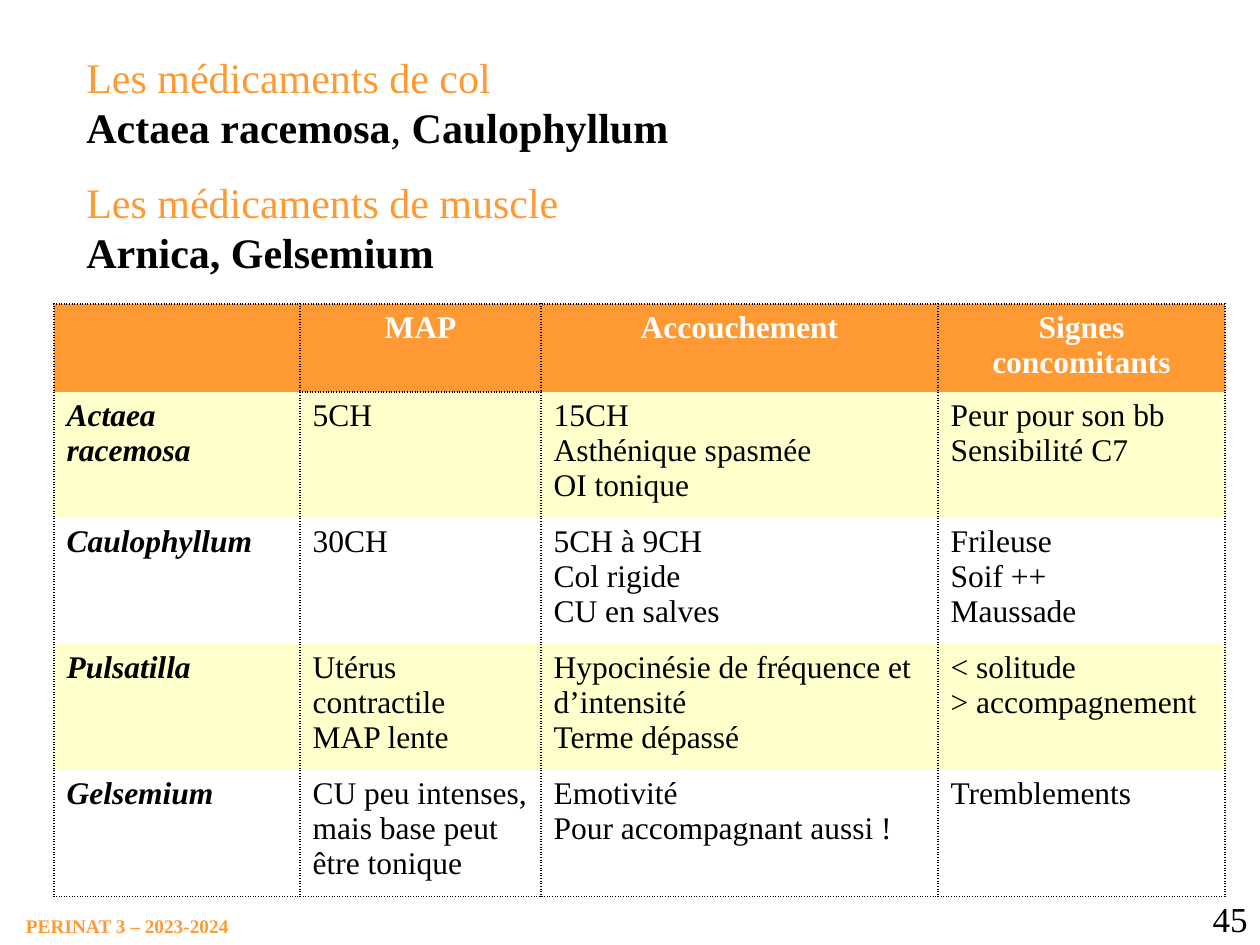
from lxml.etree import SubElement
from pptx import Presentation
from pptx.dml.color import RGBColor
from pptx.enum.text import MSO_AUTO_SIZE, PP_ALIGN
from pptx.oxml.ns import qn
from pptx.util import Emu, Pt

COLORS = {"orange": "FF9933", "cream": "FFFFCC", "white": "FFFFFF", "black": "000000"}
HEADERS = ["", "MAP", "Accouchement", "Signes concomitants"]
REMEDIES = [
    ["Actaea racemosa", "5CH", "15CH\nAsthénique spasmée\nOI tonique",
     "Peur pour son bb\nSensibilité C7"],
    ["Caulophyllum", "30CH", "5CH à 9CH\nCol rigide\nCU en salves",
     "Frileuse\nSoif ++\nMaussade"],
    ["Pulsatilla", "Utérus contractile\nMAP lente",
     "Hypocinésie de fréquence et d’intensité\nTerme dépassé",
     "< solitude\n> accompagnement"],
    ["Gelsemium", "CU peu intenses, mais base peut être tonique",
     "Emotivité\nPour accompagnant aussi !", "Tremblements"],
]
COLUMN_WIDTHS = [246, 241, 397, 287]
HEADER_HEIGHT = 88
ROW_HEIGHT = 126


def px(length):
    return Emu(round(length * 914400 / 126))


class SlideBuilder:
    font_name = "Times New Roman"

    def __init__(self, slide):
        self.slide = slide

    def format_span(self, span, size, color, bold=False, italic=False):
        font = span.font
        font.name = self.font_name
        font.size = Pt(size)
        font.bold = bold
        font.italic = italic
        font.color.rgb = RGBColor.from_string(COLORS[color])

    def text(self, left, top, width, height, paragraphs, size,
             align=PP_ALIGN.LEFT, wrap=True, inset=True):
        box = self.slide.shapes.add_textbox(px(left), px(top), px(width), px(height))
        frame = box.text_frame
        frame.word_wrap = wrap
        frame.auto_size = MSO_AUTO_SIZE.SHAPE_TO_FIT_TEXT
        if not inset:
            frame.margin_left = frame.margin_right = 0
            frame.margin_top = frame.margin_bottom = 0
        for index, (spans, space_before) in enumerate(paragraphs):
            para = frame.add_paragraph() if index else frame.paragraphs[0]
            para.alignment = align
            if space_before:
                para.space_before = Pt(space_before)
            for words, color, bold in spans:
                span = para.add_run()
                span.text = words
                self.format_span(span, size, color, bold)

    def borders(self, cell, dotted_sides):
        properties = cell._tc.get_or_add_tcPr()
        for index, side in enumerate("LRTB"):
            line = SubElement(properties, qn(f"a:ln{side}"), w=str(Pt(1)))
            if side in dotted_sides:
                fill = SubElement(line, qn("a:solidFill"))
                SubElement(fill, qn("a:srgbClr"), val=COLORS["black"])
                SubElement(line, qn("a:prstDash"), val="sysDot")
            else:
                SubElement(line, qn("a:noFill"))
            properties.insert(index, line)

    def cell(self, cell, words, fill, color, bold, italic, align):
        cell.fill.solid()
        cell.fill.fore_color.rgb = RGBColor.from_string(COLORS[fill])
        cell.text_frame.text = words
        for para in cell.text_frame.paragraphs:
            para.alignment = align
            for span in para.runs:
                self.format_span(span, 18, color, bold, italic)

    def table(self, left, top, rows, widths, heights):
        table = self.slide.shapes.add_table(
            len(rows), len(widths), px(left), px(top),
            px(sum(widths)), px(sum(heights))).table
        for column, width in zip(table.columns, widths):
            column.width = px(width)
        for row, height in zip(table.rows, heights):
            row.height = px(height)
        last = len(rows) - 1
        for row_index, row in enumerate(rows):
            header = row_index == 0
            fill = "orange" if header else ("white", "cream")[row_index % 2]
            for column_index, words in enumerate(row):
                name = not header and column_index == 0
                cell = table.cell(row_index, column_index)
                self.cell(cell, words, fill, "white" if header else "black",
                          header or name, name,
                          PP_ALIGN.CENTER if header else PP_ALIGN.LEFT)
                sides = "LR"
                if header or (row_index, column_index) == (1, 1):
                    sides += "T"
                if row_index == last or (row_index, column_index) == (0, 1):
                    sides += "B"
                self.borders(cell, sides)


def main():
    deck = Presentation()
    deck.slide_width, deck.slide_height = px(1260), px(945)
    page = SlideBuilder(deck.slides.add_slide(deck.slide_layouts[6]))
    page.text(26, 914, 207, 24, [([("PERINAT 3 – 2023-2024", "orange", True)], 0)],
              11, wrap=False, inset=False)
    page.text(1155, 891, 105, 54, [([("45", "black", False)], 0)],
              20, align=PP_ALIGN.RIGHT)
    page.table(54, 304, [HEADERS] + REMEDIES, COLUMN_WIDTHS,
               [HEADER_HEIGHT] + [ROW_HEIGHT] * len(REMEDIES))
    page.text(74, 45, 1022, 242, [
        ([("Les médicaments de col", "orange", False)], 0),
        ([("Actaea racemosa", "black", True), (", ", "black", False),
          ("Caulophyllum", "black", True)], 0),
        ([("Les médicaments de muscle", "orange", False)], 14),
        ([("Arnica, Gelsemium", "black", True)], 0),
    ], 24)
    deck.save("out.pptx")


if __name__ == "__main__":
    main()
